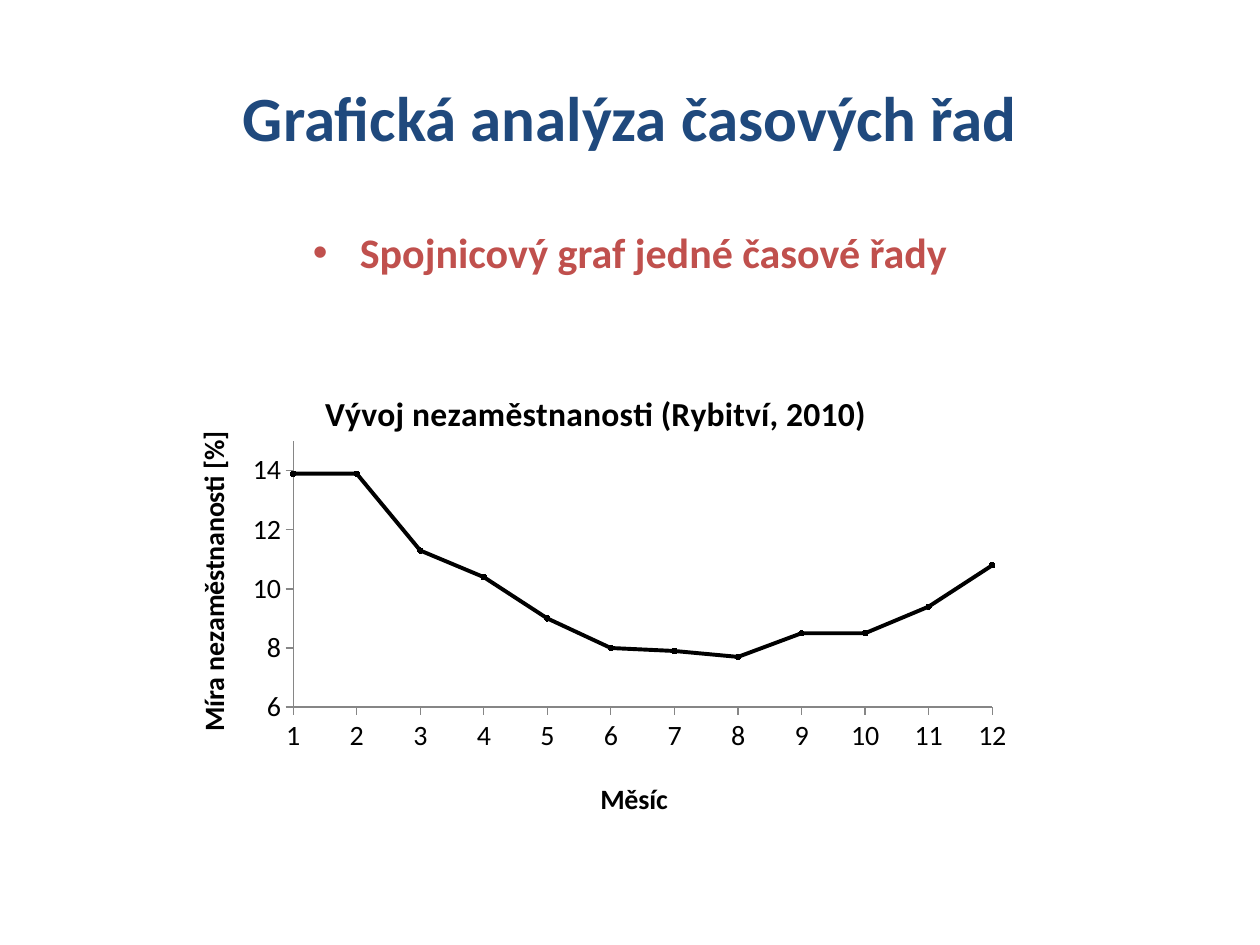
from dataclasses import dataclass

import lxml.etree
import pptx
import pptx.chart.data
import pptx.dml.color
import pptx.enum.chart
import pptx.enum.text
import pptx.oxml.ns
import pptx.util

Cm, Pt = pptx.util.Cm, pptx.util.Pt
qn = pptx.oxml.ns.qn


@dataclass(frozen=True)
class Theme:
    font: str = "Calibri"
    heading: str = "1F497D"
    accent: str = "C0504D"
    ink: str = "000000"
    axis: str = "868686"
    heading_size: float = 36
    body_size: float = 24
    chart_title_size: float = 19.2
    chart_size: float = 16


THEME = Theme()
RATES = [13.9, 13.9, 11.3, 10.4, 9, 8, 7.9, 7.7, 8.5, 8.5, 9.4, 10.8]


def rgb(color):
    return pptx.dml.color.RGBColor.from_string(color)


def format_font(font, size, color, bold=False):
    font.name, font.size, font.bold = THEME.font, Pt(size), bold
    font.color.rgb = rgb(color)


def write(tf, text, *, size, color=THEME.ink, bold=True):
    """Fill the first paragraph of a text frame and return it."""
    p = tf.paragraphs[0]
    r = p.add_run()
    r.text = text
    format_font(r.font, size, color, bold)
    return p


def add_text(s, box, text, *, anchor, **fmt):
    tf = s.shapes.add_textbox(*box).text_frame
    tf.word_wrap = True
    tf.vertical_anchor = anchor
    p = write(tf, text, **fmt)
    p.alignment = pptx.enum.text.PP_ALIGN.CENTER
    return p


def add_heading(s, box, text):
    add_text(s, box, text, anchor=pptx.enum.text.MSO_ANCHOR.MIDDLE,
             size=THEME.heading_size, color=THEME.heading)


def add_bullet(s, box, text):
    p = add_text(s, box, text, anchor=pptx.enum.text.MSO_ANCHOR.TOP,
                 size=THEME.body_size, color=THEME.accent)
    p.space_before = Pt(0.2 * THEME.body_size)
    pPr = p._p.get_or_add_pPr()
    indent = Cm(0.95)
    pPr.set("marL", str(indent))
    pPr.set("indent", str(-indent))
    lxml.etree.SubElement(pPr, qn("a:buFont")).set("typeface", "Arial")
    lxml.etree.SubElement(pPr, qn("a:buChar")).set("char", "•")


def set_layout(element, **values):
    """Place a chart part by fractions of the chart box."""
    for old in element.findall(qn("c:layout")):
        element.remove(old)
    layout = lxml.etree.Element(qn("c:layout"))
    manual = lxml.etree.SubElement(layout, qn("c:manualLayout"))
    for tag, value in values.items():
        lxml.etree.SubElement(manual, qn(f"c:{tag}")).set("val", str(value))
    tx = element.find(qn("c:tx"))
    element.insert(0 if tx is None else element.index(tx) + 1, layout)


def add_chart_title(title, text, size, x, y):
    write(title.text_frame, text, size=size)
    set_layout(title._element, xMode="edge", yMode="edge", x=x, y=y)


def format_axis(axis, title, low, high, step, x, y):
    axis.minimum_scale, axis.maximum_scale, axis.major_unit = low, high, step
    axis.has_major_gridlines = False
    axis.major_tick_mark = pptx.enum.chart.XL_TICK_MARK.OUTSIDE
    axis.minor_tick_mark = pptx.enum.chart.XL_TICK_MARK.NONE
    axis.crosses = pptx.enum.chart.XL_AXIS_CROSSES.MINIMUM
    axis.tick_labels.number_format = "0"
    axis.tick_labels.number_format_is_linked = False
    format_font(axis.tick_labels.font, THEME.chart_size, THEME.ink)
    axis.format.line.color.rgb = rgb(THEME.axis)
    axis.format.line.width = Pt(0.75)
    add_chart_title(axis.axis_title, title, THEME.chart_size, x, y)


def format_series(series):
    series.smooth = True
    series.format.line.color.rgb = rgb(THEME.ink)
    series.format.line.width = Pt(2.25)
    marker = series.marker
    marker.style = pptx.enum.chart.XL_MARKER_STYLE.CIRCLE
    marker.size = 3
    marker.format.fill.solid()
    marker.format.fill.fore_color.rgb = rgb(THEME.ink)
    marker.format.line.color.rgb = rgb(THEME.ink)


def add_unemployment_chart(s, box):
    data = pptx.chart.data.XyChartData()
    points = data.add_series("Series 1")
    for month, rate in enumerate(RATES, 1):
        points.add_data_point(month, rate)
    chart = s.shapes.add_chart(
        pptx.enum.chart.XL_CHART_TYPE.XY_SCATTER_SMOOTH, *box, data).chart
    format_font(chart.font, THEME.chart_size, THEME.ink)
    chart.has_legend = False
    chart.plots[0].vary_by_categories = False
    chart.has_title = True
    add_chart_title(chart.chart_title, "Vývoj nezaměstnanosti (Rybitví, 2010)",
                    THEME.chart_title_size, 0.18, 0.06)
    format_axis(chart.category_axis, "Měsíc", 1, 12, 1, 0.5, 0.87)
    format_axis(chart.value_axis, "Míra nezaměstnanosti [%]", 6, 15, 2, 0.03, 0.15)
    set_layout(chart._chartSpace.chart.plotArea, layoutTarget="inner",
               xMode="edge", yMode="edge", x=0.15, y=0.18, w=0.81, h=0.55)
    format_series(chart.plots[0].series[0])


def main():
    prs = pptx.Presentation()
    prs.slide_width, prs.slide_height = Cm(25.4), Cm(19.05)
    s = prs.slides.add_slide(prs.slide_layouts[6])
    left, width = Cm(1.27), Cm(22.86)
    add_heading(s, (left, Cm(0.76), width, Cm(3.18)),
                "Grafická analýza časových řad")
    add_bullet(s, (left, Cm(4.45), width, Cm(12.57)),
               "Spojnicový graf jedné časové řady")
    add_unemployment_chart(s, (Cm(3.3), Cm(7.14), Cm(17.4), Cm(9.75)))
    prs.save("out.pptx")


if __name__ == "__main__":
    main()
